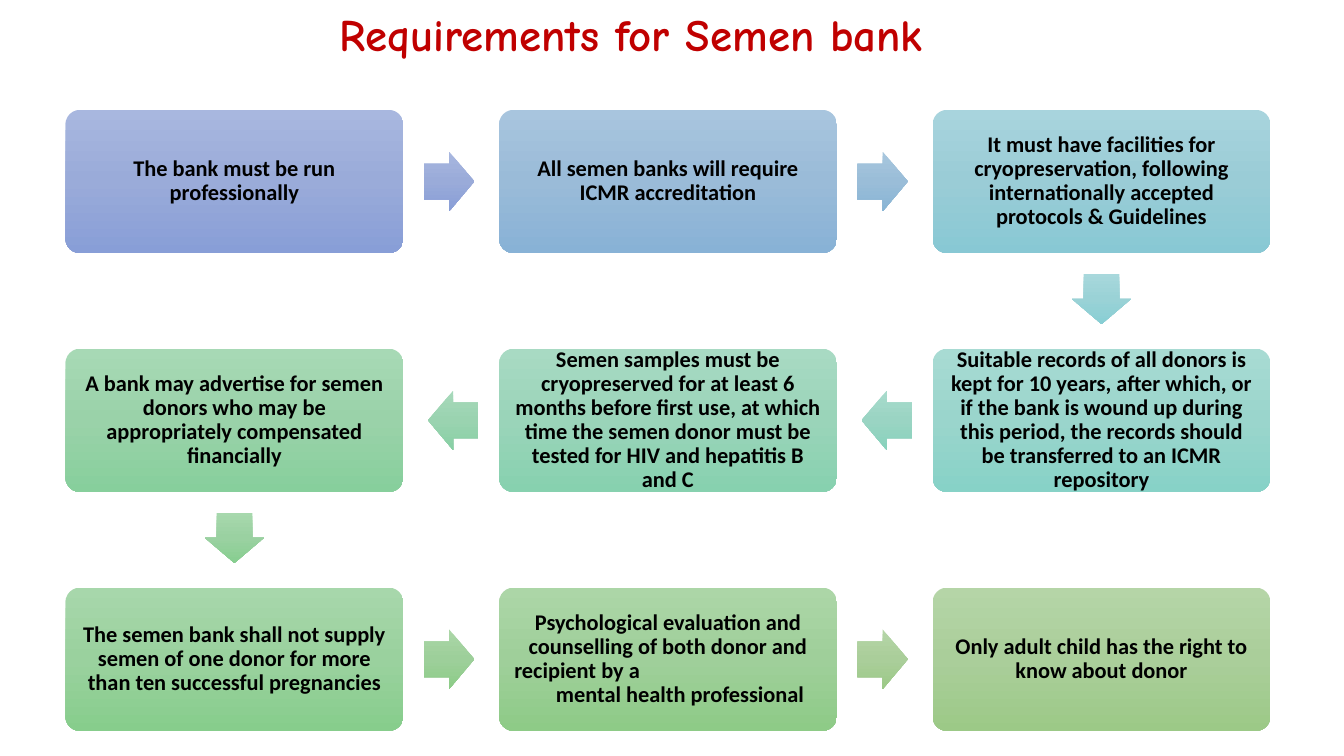
from copy import deepcopy
from itertools import pairwise

from pptx import Presentation
from pptx.dml.color import RGBColor
from pptx.enum.shapes import MSO_SHAPE as Shape
from pptx.enum.text import MSO_ANCHOR as Anchor, PP_ALIGN as Align
from pptx.oxml.ns import qn
from pptx.util import Inches, Pt

TITLE = "Requirements for Semen bank"
STEPS = [
    (["The bank must be run professionally"], "A8B7DF 9AABD9 889ED7"),
    (["All semen banks will require ICMR accreditation"], "A8C5DE 9ABBD8 88B2D6"),
    (["It must have facilities for cryopreservation, following internationally "
      "accepted protocols & Guidelines"], "A8D4DD 9ACCD6 88C8D4"),
    (["Suitable records of all donors is kept for 10 years, after which, or if the "
      "bank is wound up during this period, the records should be transferred to an "
      "ICMR repository"], "A8DBD3 9AD5CC 87D2C7"),
    (["Semen samples must be cryopreserved for at least 6 months before first use, "
      "at which time the semen donor must be tested for HIV and hepatitis B and C"],
     "A8DAC3 9AD4B9 87D1AF"),
    (["A bank may advertise for semen donors who may be appropriately compensated "
      "financially"], "A7D9B5 9AD2A9 87CF9C"),
    (["The semen bank shall not supply semen of one donor for more than ten "
      "successful pregnancies"], "A7D7AB 9AD19E 87CD8C"),
    (["Psychological evaluation and counselling of both donor and",
      "recipient by a", "mental health professional"], "ACD6A7 9FCF9A 8ECB87"),
    (["Only adult child has the right to know about donor"], "B5D5A7 AACE9A 9CC987"),
]
ARROW_COLORS = [
    "A8B7DF 9AABD9 889ED7", "A8C7DE 9ABDD8 88B5D5", "A8D8DC 9AD2D6 88CED4",
    "A8DBCC 9AD4C3 87D2BC", "A7D9BB 9AD3B0 87D0A4", "A7D8AD 9AD1A1 87CE90",
    "ABD6A7 9DCF9A 8CCC87", "B5D5A7 AACE9A 9CC987",
]
SPECIAL_LINES = {
    "recipient by a": (Align.LEFT, 0),
    "mental health professional": (Align.CENTER, 0.24),
}
THEME = {
    "title": {"name": "Comic Neue", "size": Pt(32), "bold": True, "color": "C00000"},
    "step": {"name": "Calibri", "size": Pt(16), "bold": True, "color": "000000"},
}
COLUMNS = 3
LEFT, TOP = 0.65, 1.09
COLUMN_PITCH, ROW_PITCH = 4.3, 2.37
BOX_WIDTH, BOX_HEIGHT = 3.35, 1.42
ARROW_WIDTH, ARROW_HEIGHT = 0.5, 0.59
ARROW_PULLBACK = 0.02
ROTATIONS = {(1, 0): 0, (0, 1): 90, (-1, 0): 180}


def set_attributes(target, values):
    for name, value in values.items():
        setattr(target, name, value)


def style_font(font, style):
    set_attributes(font, {key: style[key] for key in ("name", "size", "bold")})
    font.color.rgb = RGBColor.from_string(style["color"])


def add_shape(slide, kind, center, size, colors, adjustments):
    corner = [middle - length / 2 for middle, length in zip(center, size)]
    shape = slide.shapes.add_shape(kind, *map(Inches, (*corner, *size)))
    shape.shadow.inherit = False
    for index, value in enumerate(adjustments):
        shape.adjustments[index] = value
    shape.line.fill.background()
    shape.fill.gradient()
    shape.fill.gradient_angle = 270
    gradient = shape._element.spPr.find(qn("a:gradFill"))
    gradient.set("rotWithShape", "0")
    stop_list = gradient.find(qn("a:gsLst"))
    stop_list.insert(1, deepcopy(stop_list[0]))
    for index, (stop, color) in enumerate(zip(shape.fill.gradient_stops, colors.split())):
        stop.position = index / 2
        stop.color.rgb = RGBColor.from_string(color)
    return shape


def write_step(shape, lines):
    frame = shape.text_frame
    set_attributes(frame, {"word_wrap": True, "vertical_anchor": Anchor.MIDDLE})
    set_attributes(frame, {f"margin_{side}": Inches(0.11)
                           for side in ("left", "right", "top", "bottom")})
    for index, line in enumerate(lines):
        paragraph = frame.paragraphs[0] if index == 0 else frame.add_paragraph()
        alignment, indent = SPECIAL_LINES.get(line, (Align.CENTER, 0))
        set_attributes(paragraph, {"alignment": alignment, "line_spacing": 0.9})
        if indent:
            paragraph._p.get_or_add_pPr().set("marL", str(Inches(indent)))
        run = paragraph.add_run()
        run.text = line
        style_font(run.font, THEME["step"])


def snake_cell(index):
    row, column = divmod(index, COLUMNS)
    return (COLUMNS - 1 - column if row % 2 else column), row


def cell_center(cell):
    column, row = cell
    return (LEFT + column * COLUMN_PITCH + BOX_WIDTH / 2,
            TOP + row * ROW_PITCH + BOX_HEIGHT / 2)


def main():
    presentation = Presentation()
    set_attributes(presentation, {"slide_width": Inches(13.33), "slide_height": Inches(7.5)})
    slide = presentation.slides.add_slide(presentation.slide_layouts[6])

    cells = [snake_cell(index) for index in range(len(STEPS))]
    for cell, (lines, colors) in zip(cells, STEPS):
        box = add_shape(slide, Shape.ROUNDED_RECTANGLE, cell_center(cell),
                        (BOX_WIDTH, BOX_HEIGHT), colors, [0.1])
        write_step(box, lines)

    for (start, end), colors in zip(pairwise(cells), ARROW_COLORS):
        direction = tuple(b - a for a, b in zip(start, end))
        center = [(a + b) / 2 - ARROW_PULLBACK * step for a, b, step
                  in zip(cell_center(start), cell_center(end), direction)]
        arrow = add_shape(slide, Shape.RIGHT_ARROW, center,
                          (ARROW_WIDTH, ARROW_HEIGHT), colors, [0.6, 0.5])
        arrow.rotation = ROTATIONS[direction]

    title = slide.shapes.add_textbox(*map(Inches, (3.27, 0.02, 6.72, 0.64)))
    title.text_frame.word_wrap = True
    run = title.text_frame.paragraphs[0].add_run()
    run.text = TITLE
    style_font(run.font, THEME["title"])
    presentation.save("out.pptx")


if __name__ == "__main__":
    main()
